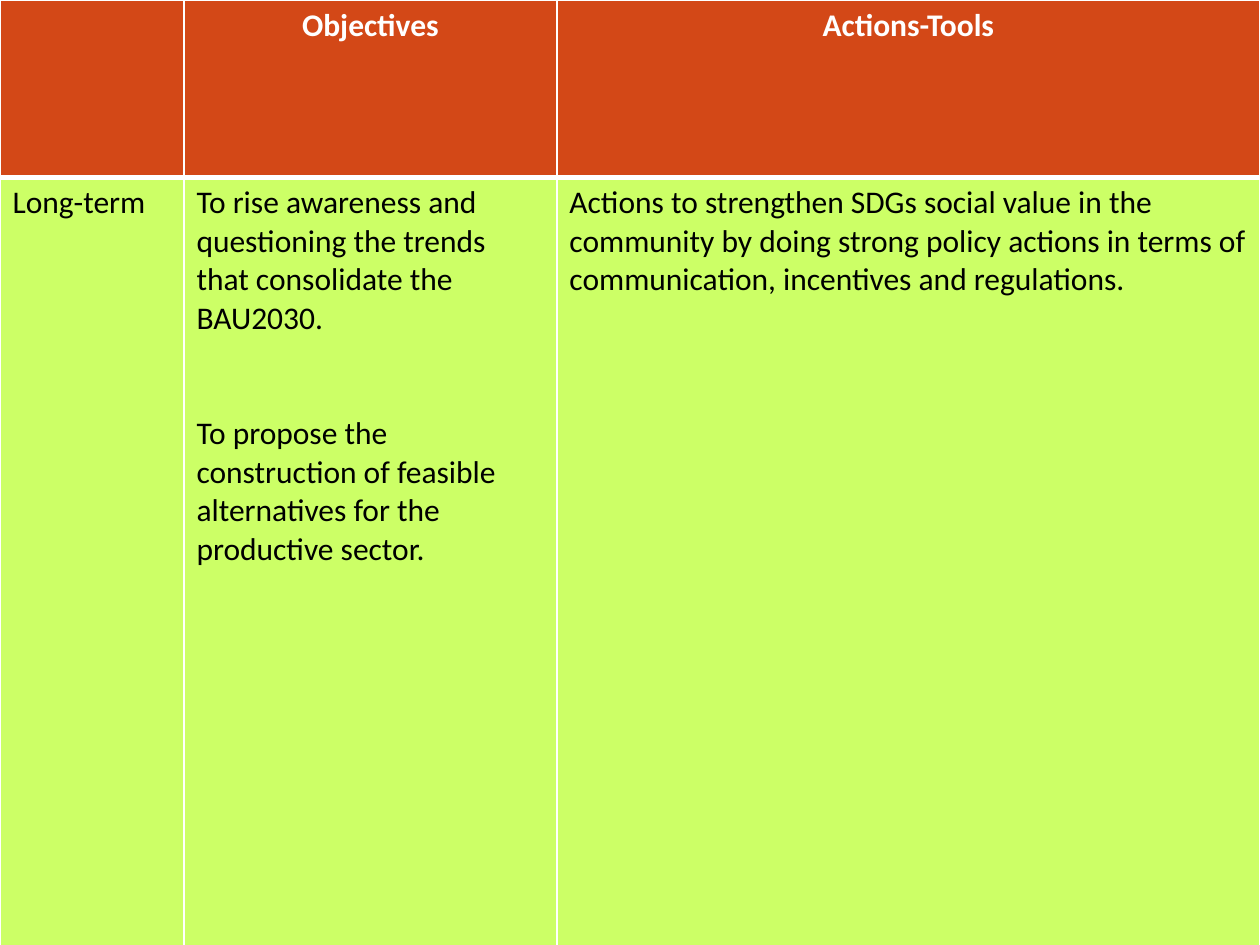
from lxml.etree import SubElement
from pptx import Presentation
from pptx.dml.color import RGBColor
from pptx.enum.text import PP_ALIGN
from pptx.oxml.ns import qn
from pptx.util import Inches, Pt

WHITE = RGBColor(0xFF, 0xFF, 0xFF)
BLACK = RGBColor(0x00, 0x00, 0x00)
ORANGE = RGBColor(0xD3, 0x48, 0x17)
LIME = RGBColor(0xCC, 0xFF, 0x66)
PINK = RGBColor(0xF7, 0xE9, 0xE8)
PALE_YELLOW = RGBColor(0xFF, 0xFF, 0x99)

FONT = "Calibri"
FONT_SIZE = Pt(18)
OBJECTIVE_GAP = Pt(44)
COLUMN_PERCENTS = [14.6, 29.6, 55.8]
ROW_PERCENTS = [18.8, 83.5, 15.3]
ROW_FILLS = [ORANGE, LIME, PINK]
ROWS = [
    ["", "Objectives", "Actions-Tools"],
    [
        "Long-term",
        "To rise awareness and questioning the trends that consolidate the BAU2030.\n"
        "To propose the construction of feasible alternatives for the productive sector.",
        "Actions to strengthen SDGs social value in the community by doing strong "
        "policy actions in terms of communication, incentives and regulations.",
    ],
    ["", "", ""],
]


def set_borders(cell, row_index):
    properties = cell._tc.get_or_add_tcPr()
    widths = {
        "a:lnL": 1,
        "a:lnR": 1,
        "a:lnT": 3 if row_index == 1 else 1,
        "a:lnB": 3 if row_index == 0 else 1,
    }
    for tag, width in widths.items():
        line = SubElement(properties, qn(tag), w=str(Pt(width)))
        fill = SubElement(line, qn("a:solidFill"))
        SubElement(fill, qn("a:srgbClr"), val=str(WHITE))


def fill_cell(cell, text, row_index):
    is_header = row_index == 0
    set_borders(cell, row_index)
    cell.fill.solid()
    cell.fill.fore_color.rgb = ROW_FILLS[row_index]
    cell.text_frame.text = text
    for index, paragraph in enumerate(cell.text_frame.paragraphs):
        paragraph.alignment = PP_ALIGN.CENTER if is_header else PP_ALIGN.LEFT
        if index:
            paragraph.space_before = OBJECTIVE_GAP
        for run in paragraph.runs:
            run.font.name = FONT
            run.font.size = FONT_SIZE
            run.font.bold = is_header
            run.font.color.rgb = WHITE if is_header else BLACK


def add_objectives_table(slide, left, top, width, height):
    table_height = int(height * sum(ROW_PERCENTS) / 100)
    table = slide.shapes.add_table(
        len(ROWS), len(COLUMN_PERCENTS), left, top, width, table_height
    ).table
    table.horz_banding = False
    for column, percent in zip(table.columns, COLUMN_PERCENTS):
        column.width = int(width * percent / 100)
    for row, percent in zip(table.rows, ROW_PERCENTS):
        row.height = int(height * percent / 100)
    for row_index, texts in enumerate(ROWS):
        for column_index, text in enumerate(texts):
            fill_cell(table.cell(row_index, column_index), text, row_index)


def main():
    presentation = Presentation()
    presentation.slide_width = Inches(10)
    presentation.slide_height = Inches(7.5)
    slide = presentation.slides.add_slide(presentation.slide_layouts[6])
    slide.background.fill.solid()
    slide.background.fill.fore_color.rgb = PALE_YELLOW
    add_objectives_table(
        slide, 0, 0, presentation.slide_width, presentation.slide_height
    )
    presentation.save("out.pptx")


if __name__ == "__main__":
    main()
